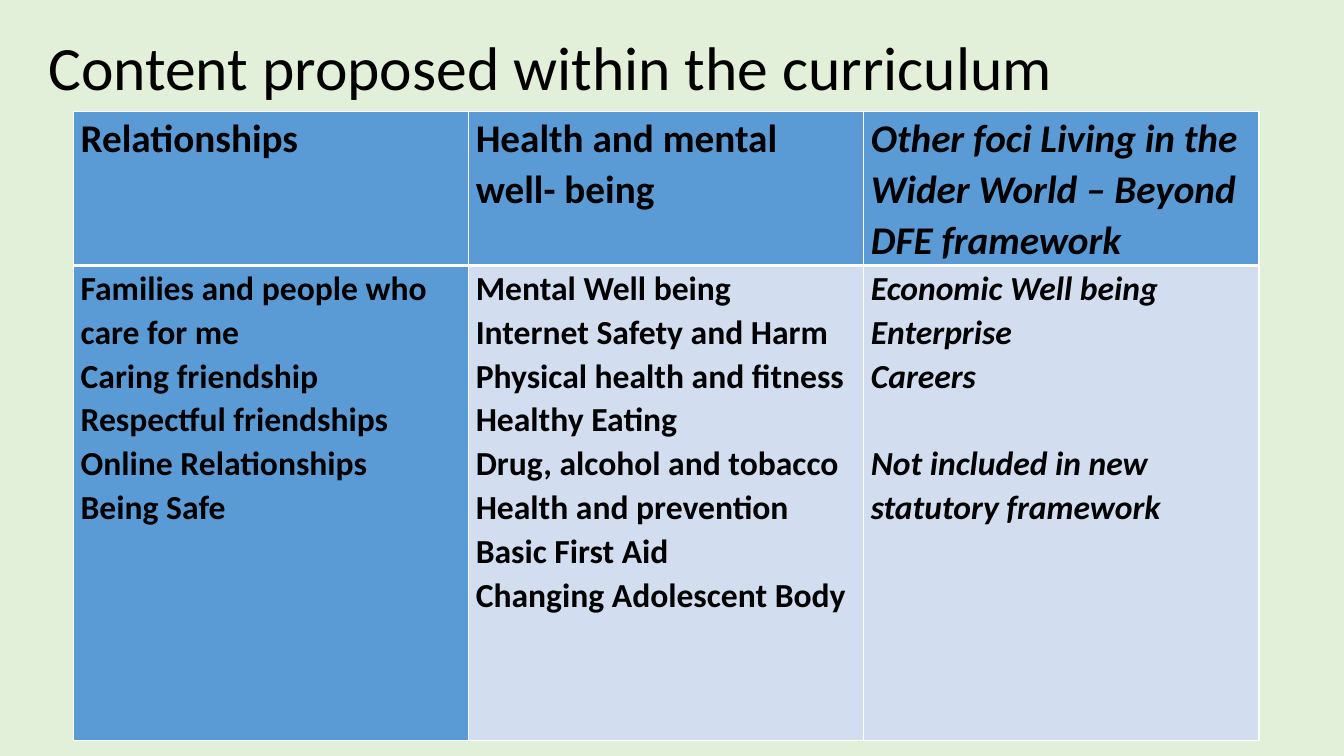
from lxml import etree
from pptx import Presentation
from pptx import util as u
from pptx.dml.color import RGBColor
from pptx.enum import text
from pptx.oxml import ns

PAGE_GREEN = RGBColor(0xE2, 0xF0, 0xD9)
STRONG_BLUE = RGBColor(0x5B, 0x9B, 0xD5)
PALE_BLUE = RGBColor(0xD2, 0xDE, 0xEF)
BLACK = RGBColor(0, 0, 0)
WHITE = RGBColor(0xFF, 0xFF, 0xFF)

WIDTH, HEIGHT = u.Inches(13.33), u.Inches(7.5)
TITLE_BOX = (0.0285, 0.032, 0.933, 0.112)  # shares of the slide's size
TABLE_BOX = (0.0548, 0.148, 0.882, 0.831)
HEADER_SHARE = 0.244  # of the table's height
LINE_SPACING = 1.07
GROUP_GAP = u.Pt(31.4)

TITLE = "Content proposed within the curriculum"
# Each column: heading, groups of topics, italic
COLUMNS = [
    ("Relationships",
     [["Families and people who care for me", "Caring friendship",
       "Respectful friendships", "Online Relationships", "Being Safe"]],
     False),
    ("Health and mental well- being",
     [["Mental Well being", "Internet Safety and Harm",
       "Physical health and fitness", "Healthy Eating",
       "Drug, alcohol and tobacco", "Health and prevention",
       "Basic First Aid", "Changing Adolescent Body"]],
     False),
    ("Other foci Living in the Wider World – Beyond DFE framework",
     [["Economic Well being", "Enterprise", "Careers"],
      ["Not included in new statutory framework"]],
     True),
]


def to_slide(shares):
    """Turn shares of the slide's size into left, top, width and height."""
    return [round(share * side) for share, side in zip(shares, (WIDTH, HEIGHT) * 2)]


def apply_format(target, values):
    for name, value in values.items():
        setattr(target, name, value)


def write_span(para, words, size, **extra):
    span = para.add_run()
    span.text = words
    apply_format(span.font, {"name": "Calibri", "size": u.Pt(size), **extra})
    span.font.color.rgb = BLACK


def draw_borders(cell, widths):
    """Add white cell borders; widths maps each side (L, R, T, B) to points."""
    properties = cell._tc.get_or_add_tcPr()
    for side, width in widths.items():
        line = etree.SubElement(properties, ns.qn(f"a:ln{side}"), w=str(u.Pt(width)))
        fill = etree.SubElement(line, ns.qn("a:solidFill"))
        etree.SubElement(fill, ns.qn("a:srgbClr"), val=str(WHITE))


def fill_cell(cell, groups, size, italic, color, borders):
    draw_borders(cell, borders)
    cell.fill.solid()
    cell.fill.fore_color.rgb = color
    apply_format(cell, {"margin_left": u.Inches(0.07), "margin_right": u.Inches(0.07),
                        "margin_top": 0, "margin_bottom": 0})
    frame = cell.text_frame
    para = None
    for number, group in enumerate(groups):
        for position, topic in enumerate(group):
            para = frame.add_paragraph() if para else frame.paragraphs[0]
            para.line_spacing = LINE_SPACING
            if number and position == 0:
                para.space_before = GROUP_GAP
            write_span(para, topic, size, bold=True, italic=italic)


def add_title(page, box):
    frame = page.shapes.add_textbox(*box).text_frame
    apply_format(frame, {"word_wrap": True,
                         "auto_size": text.MSO_AUTO_SIZE.SHAPE_TO_FIT_TEXT})
    write_span(frame.paragraphs[0], TITLE, 44)


def add_curriculum_table(page, box):
    table = page.shapes.add_table(2, len(COLUMNS), *box).table
    header_height = round(box[3] * HEADER_SHARE)
    table.rows[0].height = header_height
    table.rows[1].height = box[3] - header_height
    for index, (heading, groups, italic) in enumerate(COLUMNS):
        table.columns[index].width = box[2] // len(COLUMNS)
        fill_cell(table.cell(0, index), [[heading]], 28, italic, STRONG_BLUE,
                  {"L": 1, "R": 1, "T": 1, "B": 3})
        fill_cell(table.cell(1, index), groups, 24, italic,
                  PALE_BLUE if index else STRONG_BLUE,
                  {"L": 1, "R": 1, "T": 3, "B": 1})


def main():
    deck = Presentation()
    apply_format(deck, {"slide_width": WIDTH, "slide_height": HEIGHT})
    page = deck.slides.add_slide(deck.slide_layouts[6])
    page.background.fill.solid()
    page.background.fill.fore_color.rgb = PAGE_GREEN
    add_curriculum_table(page, to_slide(TABLE_BOX))
    add_title(page, to_slide(TITLE_BOX))
    deck.save("out.pptx")


if __name__ == "__main__":
    main()
